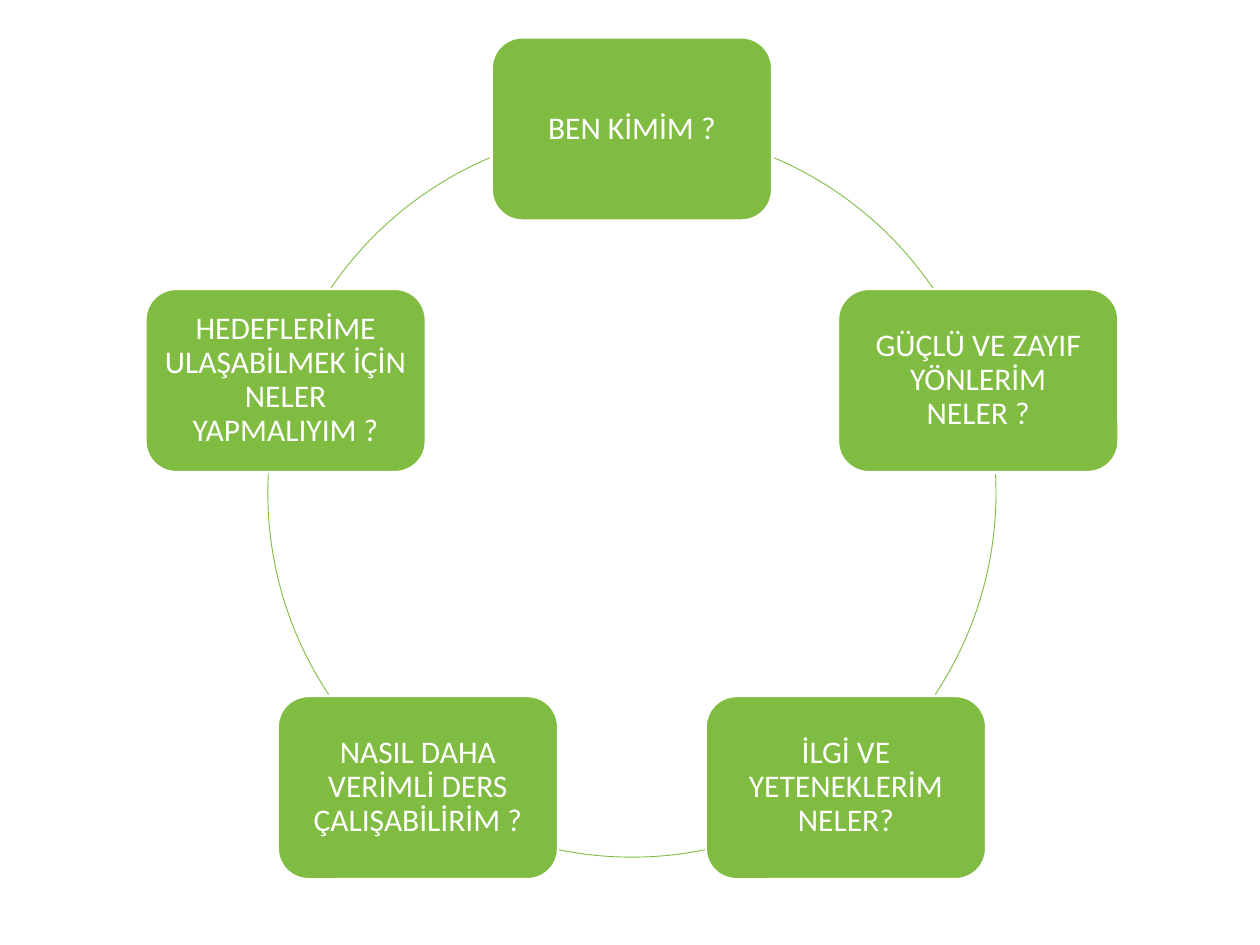
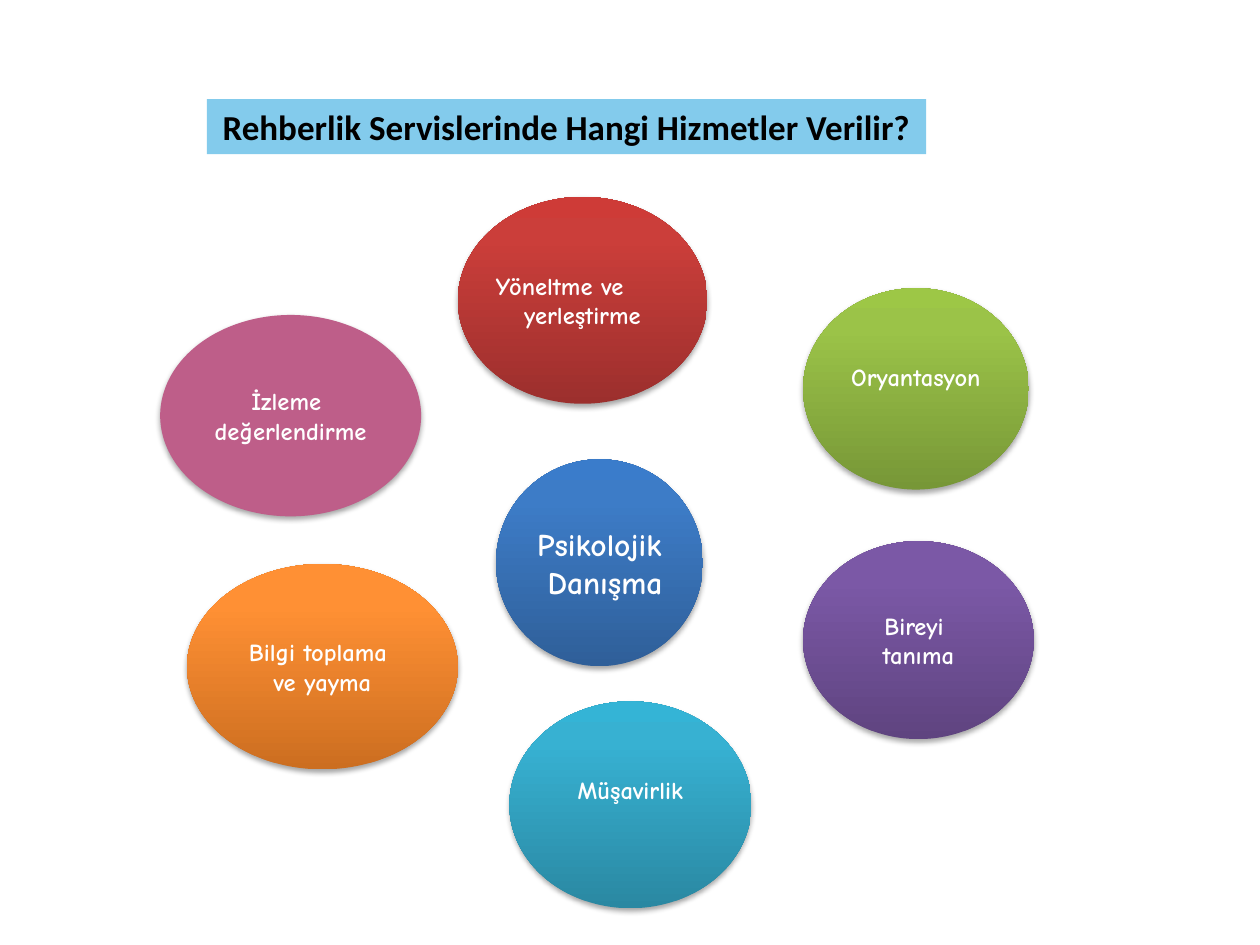
"""Two guidance-service slides: a cycle of questions and a cluster of services."""
import dataclasses
import math

import lxml.etree
import pptx
import pptx.dml.color
import pptx.enum.shapes
import pptx.enum.text
import pptx.oxml
import pptx.oxml.ns
import pptx.util

Cm = pptx.util.Cm
Pt = pptx.util.Pt
qn = pptx.oxml.ns.qn
ALIGN = pptx.enum.text.PP_ALIGN
SHAPE = pptx.enum.shapes.MSO_SHAPE


@dataclasses.dataclass(frozen=True)
class Theme:
    """Colours, fonts and type sizes of the presentation."""
    green: str = "7FBC41"
    sky: str = "83CBEC"
    white: str = "FFFFFF"
    black: str = "000000"
    blues: tuple = ("2F5F99", "3D7CC7", "3A7CCB")
    reds: tuple = ("9C2F2D", "CB3E3A", "CE3B37")
    limes: tuple = ("779737", "9BC348", "9DC746")
    purples: tuple = ("5F4480", "7B58A6", "7C57A8")
    teals: tuple = ("2A88A2", "37B1D2", "34B4D6")
    oranges: tuple = ("CC6E20", "FF9034", "FF9136")
    pinks: tuple = ("BE5E89",)
    body_font: str = "Calibri"
    bubble_font: str = "Comic Neue"
    title_size: int = 20
    large_size: int = 18
    small_size: int = 14


THEME = Theme()

QUESTIONS = (
    "BEN KİMİM ?",
    "GÜÇLÜ VE ZAYIF YÖNLERİM NELER ?",
    "İLGİ VE YETENEKLERİM NELER?",
    "NASIL DAHA VERİMLİ DERS ÇALIŞABİLİRİM ?",
    "HEDEFLERİME ULAŞABİLMEK İÇİN NELER YAPMALIYIM ?",
)
CYCLE_X, CYCLE_Y, CYCLE_RADIUS = 12.74, 9.94, 7.34
QUESTION_WIDTH, QUESTION_HEIGHT = 5.64, 3.68
ARC_SPANS = ((-67, -34.3), (-3, 33.6), (78.4, 101.6), (146.4, 183), (214.3, 247))


def rgb(value):
    """Return the colour for a hex value."""
    return pptx.dml.color.RGBColor.from_string(value)


def circle_point(center_x, center_y, degrees):
    """Return a point of the question circle around a centre, in centimetres."""
    angle = math.radians(degrees)
    return (center_x + CYCLE_RADIUS * math.cos(angle),
            center_y + CYCLE_RADIUS * math.sin(angle))


def add_panel(slide, preset, box, fill=None):
    """Add a preset shape without outline or shadow."""
    panel = slide.shapes.add_shape(preset, *map(Cm, box))
    panel.shadow.inherit = False
    panel.line.fill.background()
    if fill:
        panel.fill.solid()
        panel.fill.fore_color.rgb = rgb(fill)
    return panel


def set_inset(frame, inset, bottom=0):
    """Set equal text insets, with extra room at the bottom if asked."""
    frame.margin_left = frame.margin_right = frame.margin_top = Cm(inset)
    frame.margin_bottom = Cm(inset + bottom)


def write_lines(frame, lines, font, size, color, bold=False, first_align=ALIGN.CENTER):
    """Write one centred paragraph per line."""
    frame.vertical_anchor = pptx.enum.text.MSO_ANCHOR.MIDDLE
    for index, line in enumerate(lines):
        paragraph = frame.add_paragraph() if index else frame.paragraphs[0]
        paragraph.alignment = ALIGN.CENTER if index else first_align
        run = paragraph.add_run()
        run.text = line
        run.font.name = font
        run.font.size = Pt(size)
        run.font.bold = bold
        run.font.color.rgb = rgb(color)


def add_arc(slide, start, end):
    """Draw a thin arc in the frame of the whole question circle."""
    left, top = CYCLE_X - CYCLE_RADIUS, CYCLE_Y - CYCLE_RADIUS
    right, bottom = CYCLE_X + CYCLE_RADIUS, CYCLE_Y + CYCLE_RADIUS
    builder = slide.shapes.build_freeform(Cm(left), Cm(top))
    builder.add_line_segments([(Cm(right), Cm(bottom))], close=False)
    arc = builder.convert_to_shape()
    origin = arc.element.spPr.find(".//" + qn("a:moveTo") + "/" + qn("a:pt"))
    x, y = circle_point(CYCLE_RADIUS, CYCLE_RADIUS, start)
    origin.set("x", str(Cm(x)))
    origin.set("y", str(Cm(y)))
    diagonal = arc.element.spPr.find(".//" + qn("a:lnTo"))
    outline = diagonal.getparent()
    outline.remove(diagonal)
    radius = str(Cm(CYCLE_RADIUS))
    lxml.etree.SubElement(
        outline, qn("a:arcTo"), wR=radius, hR=radius,
        stAng=str(round(start % 360 * 60000)), swAng=str(round((end - start) * 60000)))
    arc.shadow.inherit = False
    arc.fill.background()
    arc.line.color.rgb = rgb(THEME.green)
    arc.line.width = Pt(0.5)


def add_question(slide, text, degrees):
    """Place a question card on the circle."""
    x, y = circle_point(CYCLE_X, CYCLE_Y, degrees)
    box = (x - QUESTION_WIDTH / 2, y - QUESTION_HEIGHT / 2, QUESTION_WIDTH, QUESTION_HEIGHT)
    card = add_panel(slide, SHAPE.ROUNDED_RECTANGLE, box, THEME.green)
    card.line.color.rgb = rgb(THEME.white)
    card.line.width = Pt(1)
    frame = card.text_frame
    frame.word_wrap = True
    set_inset(frame, 0.18)
    write_lines(frame, [text], THEME.body_font, THEME.large_size, THEME.white)
    frame.paragraphs[0].line_spacing = 0.9


def shade_upwards(shape, colors):
    """Fill a shape with a gradient that runs from bottom to top."""
    shape.fill.gradient()
    shape.fill.gradient_angle = 90
    stops = shape.element.spPr.find(".//" + qn("a:gsLst"))
    for stop in list(stops):
        stops.remove(stop)
    for position, color in zip((0, 80000, 100000), colors):
        stop = lxml.etree.SubElement(stops, qn("a:gs"), pos=str(position))
        lxml.etree.SubElement(stop, qn("a:srgbClr"), val=color)


def add_soft_shadow(shape):
    """Give a shape a soft shadow below it."""
    effects = shape.element.spPr.find(qn("a:effectLst"))
    shadow = lxml.etree.SubElement(
        effects, qn("a:outerShdw"), blurRad=str(Pt(3.1)),
        dist=str(Pt(1.8)), dir="5400000", rotWithShape="0")
    color = lxml.etree.SubElement(shadow, qn("a:srgbClr"), val=THEME.black)
    lxml.etree.SubElement(color, qn("a:alpha"), val="35000")


def add_service(slide, lines, box, colors, size=THEME.small_size, lift=0,
                first_align=ALIGN.CENTER):
    """Add a service bubble with its name."""
    solid = colors[0] if len(colors) == 1 else None
    bubble = add_panel(slide, SHAPE.OVAL, box, solid)
    if not solid:
        shade_upwards(bubble, colors)
    add_soft_shadow(bubble)
    frame = bubble.text_frame
    frame.word_wrap = True
    set_inset(frame, 0.03, lift)
    write_lines(frame, lines, THEME.bubble_font, size, THEME.white, True, first_align)


def add_title(slide, text):
    """Add the title on its coloured band."""
    band = add_panel(slide, SHAPE.RECTANGLE, (4.17, 2, 14.5, 1.11), THEME.sky)
    band.text_frame.word_wrap = False
    write_lines(band.text_frame, [text], THEME.body_font, THEME.title_size, THEME.black, True)


def build_question_cycle(slide):
    """Build the circle of questions."""
    for index, (question, span) in enumerate(zip(QUESTIONS, ARC_SPANS)):
        add_question(slide, question, -90 + index * 360 / len(QUESTIONS))
        add_arc(slide, *span)


def build_services(slide):
    """Build the overview of guidance services."""
    add_title(slide, "Rehberlik Servislerinde Hangi Hizmetler Verilir?")
    add_service(slide, ["Psikolojik", " Danışma"], (10, 9.26, 4.17, 4.17),
                THEME.blues, size=THEME.large_size)
    add_service(slide, ["Yöneltme ve", "yerleştirme"], (9.23, 3.97, 5.03, 4.17),
                THEME.reds, first_align=ALIGN.LEFT)
    add_service(slide, ["Oryantasyon"], (16.19, 5.81, 4.55, 4.06), THEME.limes, lift=0.49)
    add_service(slide, ["Bireyi ", "tanıma"], (16.19, 10.91, 4.65, 3.99), THEME.purples)
    add_service(slide, ["Müşavirlik"], (10.27, 14.14, 4.88, 4.17), THEME.teals, lift=0.59)
    add_service(slide, ["Bilgi toplama ", "ve yayma"], (3.77, 11.37, 5.46, 4.14), THEME.oranges)
    add_service(slide, ["İzleme ", "değerlendirme"], (3.23, 6.35, 5.26, 4.06), THEME.pinks)


def main():
    """Create and save the presentation."""
    presentation = pptx.Presentation()
    presentation.slide_width = Cm(25.4)
    presentation.slide_height = Cm(19.05)
    blank = presentation.slide_layouts[6]
    for build in (build_question_cycle, build_services):
        build(presentation.slides.add_slide(blank))
    presentation.save("out.pptx")


if __name__ == "__main__":
    main()
